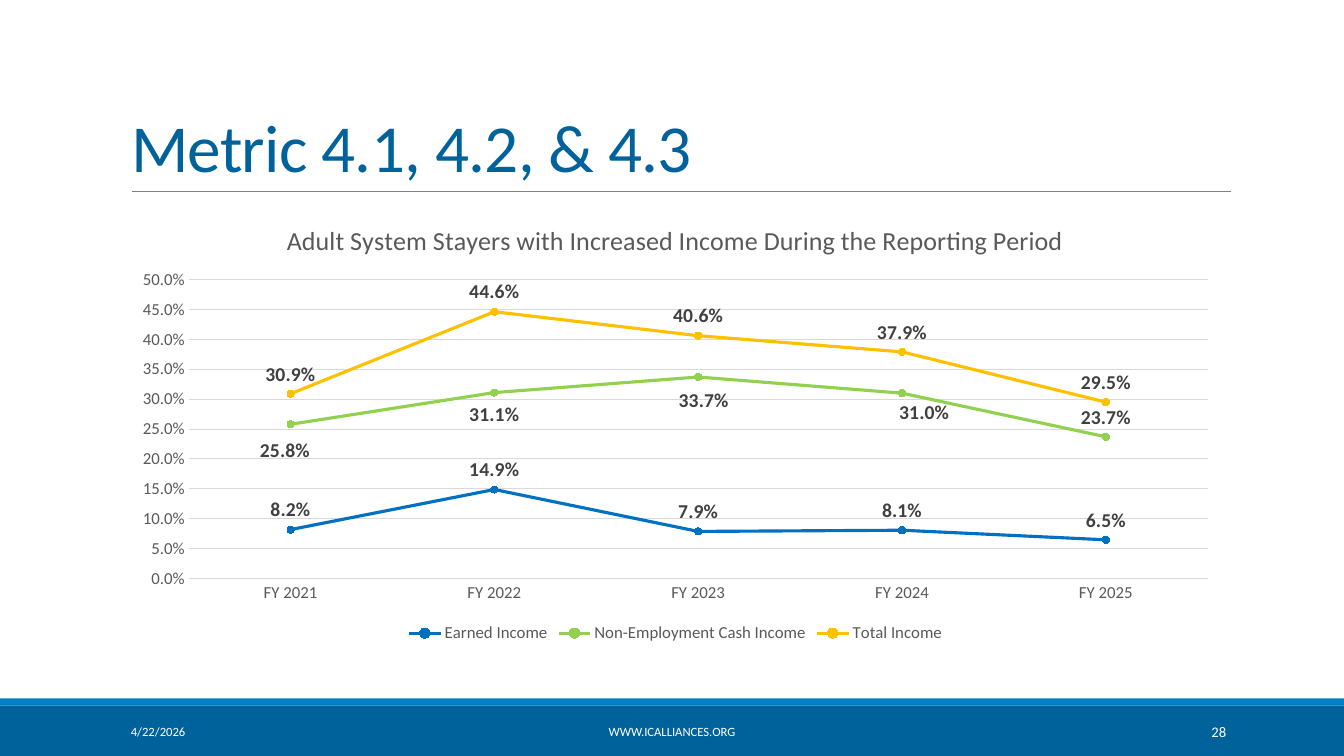
from lxml.etree import SubElement
from pptx import Presentation
from pptx.chart.data import CategoryChartData
from pptx.dml.color import RGBColor
from pptx.enum.chart import XL_CHART_TYPE as ChartType
from pptx.enum.chart import XL_LABEL_POSITION as LabelPosition
from pptx.enum.chart import XL_LEGEND_POSITION as LegendPosition
from pptx.enum.chart import XL_MARKER_STYLE as MarkerStyle
from pptx.enum.chart import XL_TICK_MARK as TickMark
from pptx.enum.shapes import MSO_CONNECTOR as Connector
from pptx.enum.shapes import MSO_SHAPE as Shape
from pptx.enum.text import MSO_ANCHOR as Anchor
from pptx.enum.text import MSO_AUTO_SIZE as AutoSize
from pptx.enum.text import PP_ALIGN as Align
from pptx.oxml import parse_xml
from pptx.oxml.ns import nsdecls, qn
from pptx.util import Inches, Pt

NAVY = RGBColor(0x00, 0x62, 0x9B)
AZURE = RGBColor(0x00, 0x7E, 0xC4)
BLUE = RGBColor(0x00, 0x70, 0xC0)
GREEN = RGBColor(0x92, 0xD0, 0x50)
AMBER = RGBColor(0xFF, 0xC0, 0x00)
WHITE = RGBColor(0xFF, 0xFF, 0xFF)
GREY = RGBColor(0x80, 0x80, 0x80)
PALE_GREY = RGBColor(0xD9, 0xD9, 0xD9)
AXIS_GREY = RGBColor(0x59, 0x59, 0x59)
LABEL_GREY = RGBColor(0x40, 0x40, 0x40)

COLUMNS, ROWS = 133.3, 75
PERCENT = "0.0%"
YEARS = [f"FY {year}" for year in range(2021, 2026)]
INCOMES = [
    ("Earned Income", (0.082, 0.149, 0.079, 0.081, 0.065), BLUE, AZURE),
    ("Non-Employment Cash Income", (0.258, 0.311, 0.337, 0.31, 0.237), GREEN, GREEN),
    ("Total Income", (0.309, 0.446, 0.406, 0.379, 0.295), AMBER, AMBER),
]
# Shifts of the labels that sit below the middle line, as shares of the chart
LOW_LABEL_SHIFTS = [(-0.005, 0.015), (0, 0.005), (0.005, 0.01), (0.02, 0)]


def layout_xml(**parts):
    values = "".join(f'<c:{name} val="{value}"/>' for name, value in parts.items())
    return parse_xml(f'<c:layout {nsdecls("c")}><c:manualLayout>{values}'
                     "</c:manualLayout></c:layout>")


class MetricSlide:
    """Slide on a grid of COLUMNS by ROWS, with one font throughout."""

    font_name = "Calibri"

    def __init__(self, deck):
        self.column = deck.slide_width / COLUMNS
        self.row = deck.slide_height / ROWS
        self.page = deck.slides.add_slide(deck.slide_layouts[5])

    def place(self, left, top, width, height):
        return (round(left * self.column), round(top * self.row),
                round(width * self.column), round(height * self.row))

    def style(self, font, size, color, bold=False):
        font.name, font.size, font.bold = self.font_name, Pt(size), bold
        font.color.rgb = color

    def band(self, top, height, color):
        band = self.page.shapes.add_shape(
            Shape.RECTANGLE, *self.place(0, top, COLUMNS, height))
        band.shadow.inherit = False
        band.fill.solid()
        band.fill.fore_color.rgb = color
        band.line.fill.background()

    def rule(self, left, right, row):
        start_x, y, end_x, _ = self.place(left, row, right, 0)
        rule = self.page.shapes.add_connector(Connector.STRAIGHT, start_x, y, end_x, y)
        rule.line.color.rgb = GREY
        rule.line.width = Pt(0.5)
        SubElement(rule._element.spPr, qn("a:effectLst"))

    def title(self, text, *area):
        title = self.page.shapes.title
        title.left, title.top, title.width, title.height = self.place(*area)
        frame = title.text_frame
        frame.text = text
        frame.auto_size = AutoSize.NONE
        frame.vertical_anchor = Anchor.BOTTOM
        para = frame.paragraphs[0]
        para.alignment = Align.LEFT
        para.line_spacing = 0.85
        self.style(para.font, 48, NAVY)
        para.runs[0].font._element.set("spc", "-50")

    def text(self, text, area, align, size=9):
        frame = self.page.shapes.add_textbox(*self.place(*area)).text_frame
        frame.word_wrap = True
        frame.vertical_anchor = Anchor.MIDDLE
        para = frame.paragraphs[0]
        para.text = text
        para.alignment = align
        self.style(para.font, size, WHITE)

    def line_chart(self, heading, *area):
        data = CategoryChartData(number_format=PERCENT)
        data.categories = YEARS
        for name, values, *_ in INCOMES:
            data.add_series(name, values)
        chart = self.page.shapes.add_chart(
            ChartType.LINE_MARKERS, *self.place(*area), data).chart
        self.style(chart.font, 12, AXIS_GREY)
        para = chart.chart_title.text_frame.paragraphs[0]
        para.text = heading
        self.style(para.font, 18.6, AXIS_GREY)
        chart.chart_title.include_text_in_layout = False
        chart.has_legend = True
        chart.legend.position = LegendPosition.BOTTOM
        chart.legend.include_in_layout = False
        self.style(chart.legend.font, 12, AXIS_GREY)
        self.axes(chart)
        plot = chart.plots[0]
        plot.vary_by_categories = False
        for series, (*_, color, marker_color) in zip(plot.series, INCOMES):
            self.series(series, color, marker_color)
        self.lower_labels(plot.series[1])
        plot_area = chart._chartSpace.chart.plotArea
        for old in plot_area.findall(qn("c:layout")):
            plot_area.remove(old)
        plot_area.insert(0, layout_xml(
            layoutTarget="inner", xMode="edge", yMode="edge",
            x=0.061, y=0.171, w=0.919, h=0.675))

    def axes(self, chart):
        for axis in (chart.category_axis, chart.value_axis):
            axis.major_tick_mark = axis.minor_tick_mark = TickMark.NONE
            self.style(axis.tick_labels.font, 12, AXIS_GREY)
        values = chart.value_axis
        values.minimum_scale, values.maximum_scale, values.major_unit = 0, 0.5, 0.05
        values.tick_labels.number_format = PERCENT
        values.tick_labels.number_format_is_linked = False
        values.format.line.fill.background()
        for line in (chart.category_axis.format.line, values.major_gridlines.format.line):
            line.color.rgb = PALE_GREY
            line.width = Pt(0.75)

    def series(self, series, color, marker_color):
        series.smooth = False
        series.format.line.color.rgb = color
        series.format.line.width = Pt(2.25)
        marker = series.marker
        marker.style, marker.size = MarkerStyle.CIRCLE, 5
        marker.format.fill.solid()
        marker.format.fill.fore_color.rgb = marker_color
        marker.format.line.color.rgb = color
        labels = series.data_labels
        labels.show_value = True
        labels.position = LabelPosition.ABOVE
        labels.number_format = PERCENT
        labels.number_format_is_linked = False
        self.style(labels.font, 14, LABEL_GREY, bold=True)

    def lower_labels(self, series):
        for index, (x, y) in enumerate(LOW_LABEL_SHIFTS):
            label = series.points[index].data_label
            self.style(label.font, 14, LABEL_GREY, bold=True)
            label.position = LabelPosition.BELOW
        marks = series._element.findall(f'{qn("c:dLbls")}/{qn("c:dLbl")}')
        for mark, (x, y) in zip(marks, LOW_LABEL_SHIFTS):
            mark.find(qn("c:idx")).addnext(layout_xml(x=x, y=y))


def main():
    deck = Presentation()
    deck.slide_width, deck.slide_height = Inches(13.33), Inches(7.5)
    slide = MetricSlide(deck)
    slide.band(70, 5, NAVY)
    slide.band(69.3, 0.7, AZURE)
    slide.rule(13.1, 122.1, 19)
    slide.title("Metric 4.1, 4.2, & 4.3", 12, 3.1, 110, 15.9)
    slide.line_chart(
        "Adult System Stayers with Increased Income During the Reporting Period",
        12, 20.2, 110, 44)
    slide.text("4/22/2026", (12, 70.6, 27, 4), Align.LEFT)
    slide.text("WWW.ICALLIANCES.ORG", (40.3, 70.6, 52.7, 4), Align.CENTER)
    slide.text("28", (108.3, 70.6, 14.3, 4), Align.RIGHT, size=10.5)
    deck.save("out.pptx")


if __name__ == "__main__":
    main()
